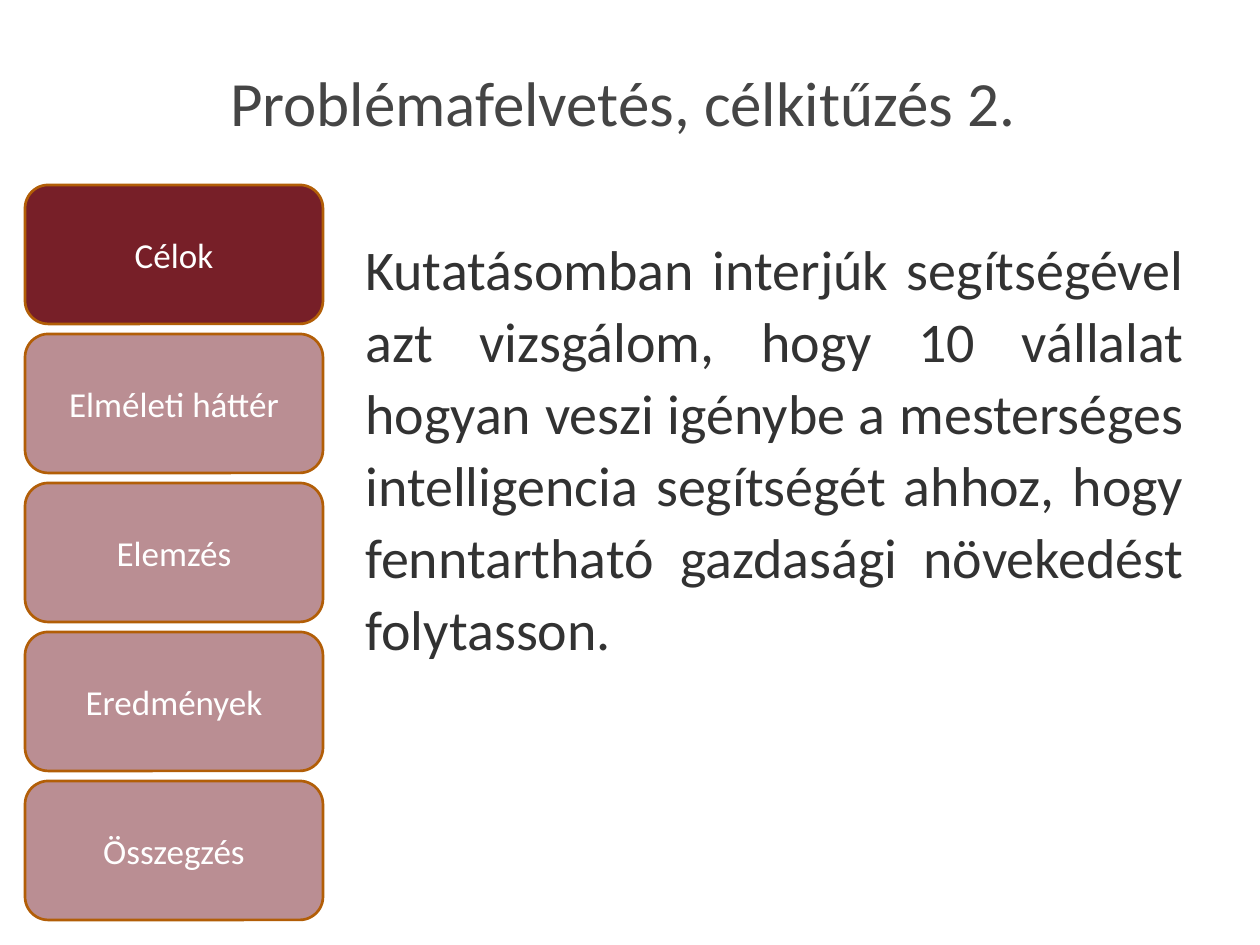
"""Build the research goals slide with its section navigation column."""
from lxml import etree
from pptx import Presentation
from pptx.dml.color import RGBColor
from pptx.enum.shapes import MSO_SHAPE as SHAPE
from pptx.enum.text import MSO_ANCHOR as ANCHOR, PP_ALIGN as ALIGN
from pptx.oxml.ns import qn
from pptx.util import Emu, Pt

GREY = RGBColor(0x45, 0x45, 0x45)
DARK = RGBColor(0x32, 0x32, 0x32)
WINE = RGBColor(0x77, 0x1F, 0x28)
AMBER = RGBColor(0xB2, 0x5E, 0x07)
WHITE = RGBColor(0xFF, 0xFF, 0xFF)
SECTIONS = ["Célok", "Elméleti háttér", "Elemzés", "Eredmények", "Összegzés"]
ACTIVE = "Célok"
PITCH = 149


def px(n):
    return Emu(round(n * 914400 / 126))


def write(sp, text, size, color, align, anchor):
    tf = sp.text_frame
    tf.word_wrap = True
    tf.vertical_anchor = anchor
    p = tf.paragraphs[0]
    p.alignment = align
    r = p.add_run()
    r.text = text
    for name, value in {"name": "Calibri", "size": Pt(size), "bold": False}.items():
        setattr(r.font, name, value)
    r.font.color.rgb = color
    return p


prs = Presentation()
prs.slide_width, prs.slide_height = px(1260), px(945)
s = prs.slides.add_slide(prs.slide_layouts[5])

title = s.shapes.title
frame = {"left": 63, "top": 38, "width": 1134, "height": 127}
for name, value in frame.items():
    setattr(title, name, px(value))
write(title, "Problémafelvetés, célkitűzés 2. ", 36, GREY, ALIGN.CENTER, ANCHOR.MIDDLE)

body = s.shapes.add_textbox(px(353), px(224), px(844), px(655))
p = write(
    body,
    "Kutatásomban interjúk segítségével azt vizsgálom, hogy 10 vállalat "
    "hogyan veszi igénybe a mesterséges intelligencia segítségét ahhoz, "
    "hogy fenntartható gazdasági növekedést folytasson.",
    32, DARK, ALIGN.JUSTIFY, ANCHOR.TOP,
)
p.line_spacing = 1.07
p.space_before = Pt(6.4)

for i, section in enumerate(SECTIONS):
    sp = s.shapes.add_shape(
        SHAPE.ROUNDED_RECTANGLE, px(25), px(185 + i * PITCH), px(298), px(139)
    )
    sp.shadow.inherit = False
    sp.fill.solid()
    sp.fill.fore_color.rgb = WINE
    if section != ACTIVE:
        color = sp.fill._xPr.find(qn("a:solidFill"))[0]
        etree.SubElement(color, qn("a:alpha"), val="50000")
    sp.line.color.rgb = AMBER
    sp.line.width = Pt(1.54)
    write(sp, section, 20, WHITE, ALIGN.CENTER, ANCHOR.MIDDLE)

prs.save("out.pptx")
